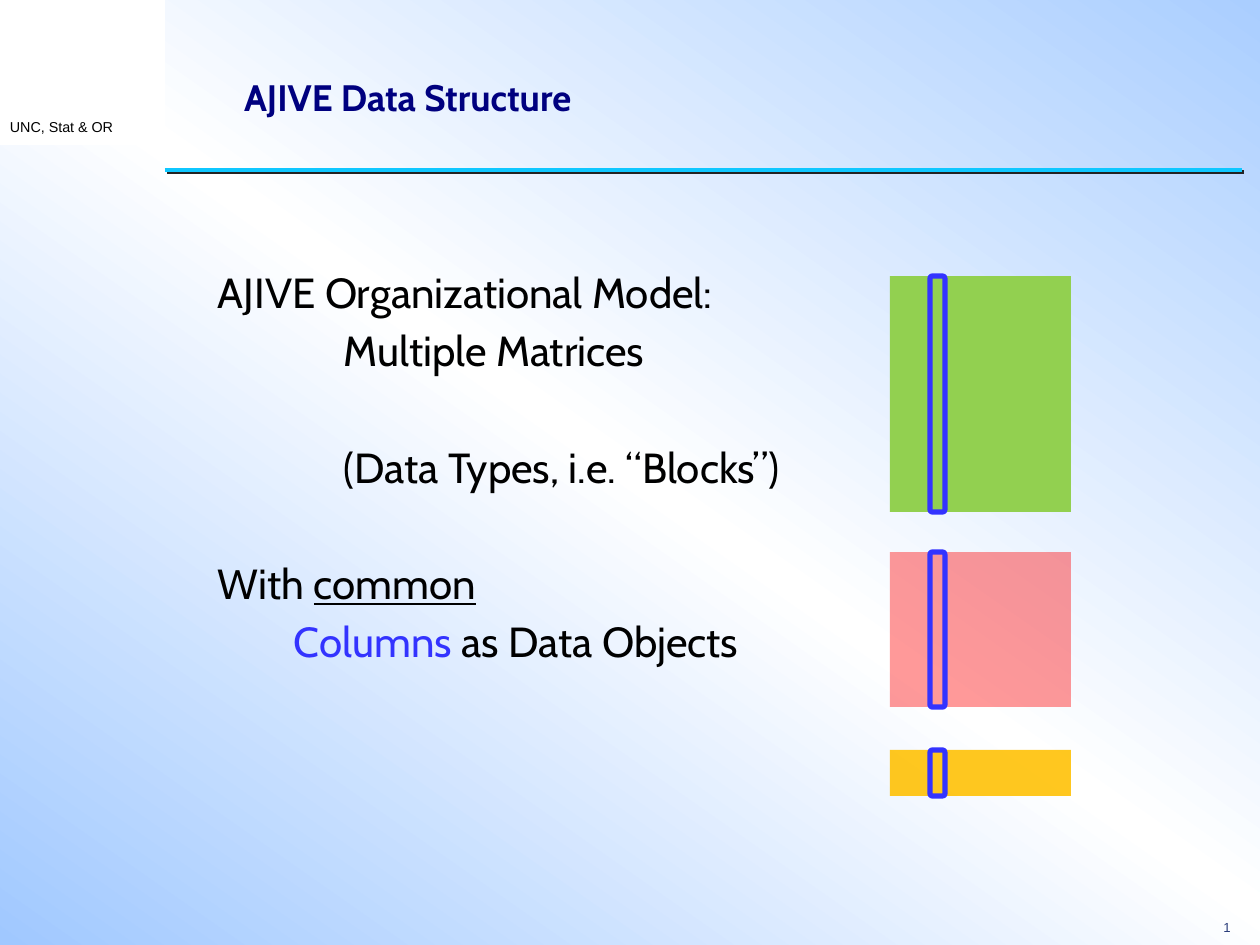
import pptx
import pptx.util
import pptx.dml.color
import pptx.enum.shapes
import pptx.enum.text
import pptx.oxml
import pptx.oxml.ns
from lxml import etree

SCALE = 914400 / 126
INK, BLUE, NAVY = "000000", "3333FF", "00007F"
STOPS = [(0, "AACEFF"), (50, "FFFFFF"), (100, "A0C8FF")]

TITLE = "AJIVE Data Structure"
# left margin px, space before pt, runs of (text, colour, underlined)
BODY = [
    (0, 0, [("AJIVE Organizational Model:", INK, False)]),
    (126, 4.3, [("Multiple Matrices", INK, False)]),
    (126, 37.8, [("(Data Types, i.e. “Blocks”)", INK, False)]),
    (0, 37.8, [("With ", INK, False), ("common", INK, True)]),
    (76, 4.3, [("Columns", BLUE, False), (" as Data Objects", INK, False)]),
]
# top px, height px, colour, opacity %
BLOCKS = [(276, 236, "92D050", 100), (552, 155, "FF0000", 40), (750, 46, "FFC000", 88)]
LEFT, WIDE = 890, 181
COL_LEFT, COL_WIDE = 930, 15

SHAPE = pptx.enum.shapes.MSO_SHAPE
ANCHOR = pptx.enum.text.MSO_ANCHOR
qn = pptx.oxml.ns.qn


def px(n):
    return pptx.util.Emu(round(n * SCALE))


def rgb(code):
    return pptx.dml.color.RGBColor.from_string(code)


def sub(node, tag, **attrs):
    return etree.SubElement(node, qn(tag), {k: str(v) for k, v in attrs.items()})


def write(para, text, font, size, color, bold=False, under=False):
    run = para.add_run()
    run.text = text
    face = run.font
    face.name, face.size = font, pptx.util.Pt(size)
    face.bold, face.underline = bold, under
    face.color.rgb = rgb(color)


def frame(shape, anchor, pads=(13, 6, 13, 6), wrap=True):
    box = shape.text_frame
    box.auto_size = pptx.enum.text.MSO_AUTO_SIZE.NONE
    box.word_wrap, box.vertical_anchor = wrap, anchor
    box.margin_left, box.margin_top, box.margin_right, box.margin_bottom = map(px, pads)
    return box


def rect(slide, kind, x, y, w, h, fill=None, alpha=100, line=None):
    shape = slide.shapes.add_shape(kind, px(x), px(y), px(w), px(h))
    shape.shadow.inherit = False
    if fill:
        shape.fill.solid()
        shape.fill.fore_color.rgb = rgb(fill)
        if alpha < 100:
            color = shape.fill._xPr.find(".//" + qn("a:srgbClr"))
            sub(color, "a:alpha", val=alpha * 1000)
    else:
        shape.fill.background()
    if line:
        shape.line.color.rgb = rgb(line)
        shape.line.width = pptx.util.Pt(3)
    else:
        shape.line.fill.background()
    return shape


def paint(slide):
    """Fill the background with the diagonal gradient."""
    fill = slide.background.fill
    fill.gradient()
    fill.gradient_angle = 235
    stops = slide._element.find(".//" + qn("a:gsLst"))
    for old in list(stops):
        stops.remove(old)
    for pos, color in STOPS:
        sub(sub(stops, "a:gs", pos=pos * 1000), "a:srgbClr", val=color)


def rule(slide):
    """Draw the line under the title with its hard shadow."""
    line = slide.shapes.add_connector(
        pptx.enum.shapes.MSO_CONNECTOR.STRAIGHT, px(165), px(170), px(1242), px(170))
    line.line.color.rgb = rgb("0FC7FF")
    line.line.width = pptx.util.Pt(2.25)
    effects = sub(line._element.spPr, "a:effectLst")
    shade = sub(effects, "a:outerShdw", dist=17780, dir=2700000, algn="ctr", rotWithShape=0)
    sub(shade, "a:srgbClr", val="232323")


def main():
    deck = pptx.Presentation()
    deck.slide_width, deck.slide_height = px(1260), px(945)
    slide = deck.slides.add_slide(deck.slide_layouts[5])
    paint(slide)
    rule(slide)

    number = slide.shapes.add_textbox(px(1206), px(914), px(42), px(26))
    box = frame(number, ANCHOR.MIDDLE, wrap=False)
    box.paragraphs[0].alignment = pptx.enum.text.PP_ALIGN.CENTER
    write(box.paragraphs[0], "1", "Arial", 7.5, "2A3D7A")

    label = rect(slide, SHAPE.RECTANGLE, 0, 0, 165, 145, "FFFFFF")
    para = frame(label, ANCHOR.BOTTOM, (10, 5, 10, 10)).paragraphs[0]
    para.alignment = pptx.enum.text.PP_ALIGN.LEFT
    write(para, "UNC, Stat & OR", "Arial", 8.2, INK)

    title = slide.shapes.title
    title.left, title.top, title.width, title.height = map(px, (231, 63, 985, 68))
    para = frame(title, ANCHOR.MIDDLE).paragraphs[0]
    para.alignment = pptx.enum.text.PP_ALIGN.LEFT
    write(para, TITLE, "Cabin", 21, NAVY, bold=True)

    body = slide.shapes.add_textbox(px(205), px(261), px(854), px(492))
    box = frame(body, ANCHOR.TOP)
    for i, (indent, gap, runs) in enumerate(BODY):
        para = box.add_paragraph() if i else box.paragraphs[0]
        para._p.get_or_add_pPr().set("marL", str(px(indent)))
        para.space_before = pptx.util.Pt(gap)
        for text, color, under in runs:
            write(para, text, "Cabin", 24, color, under=under)

    for top, high, color, alpha in BLOCKS:
        rect(slide, SHAPE.RECTANGLE, LEFT, top, WIDE, high, color, alpha)
    for top, high, *_ in BLOCKS:
        rect(slide, SHAPE.ROUNDED_RECTANGLE, COL_LEFT, top, COL_WIDE, high, line=BLUE)

    deck.save("out.pptx")


if __name__ == "__main__":
    main()
